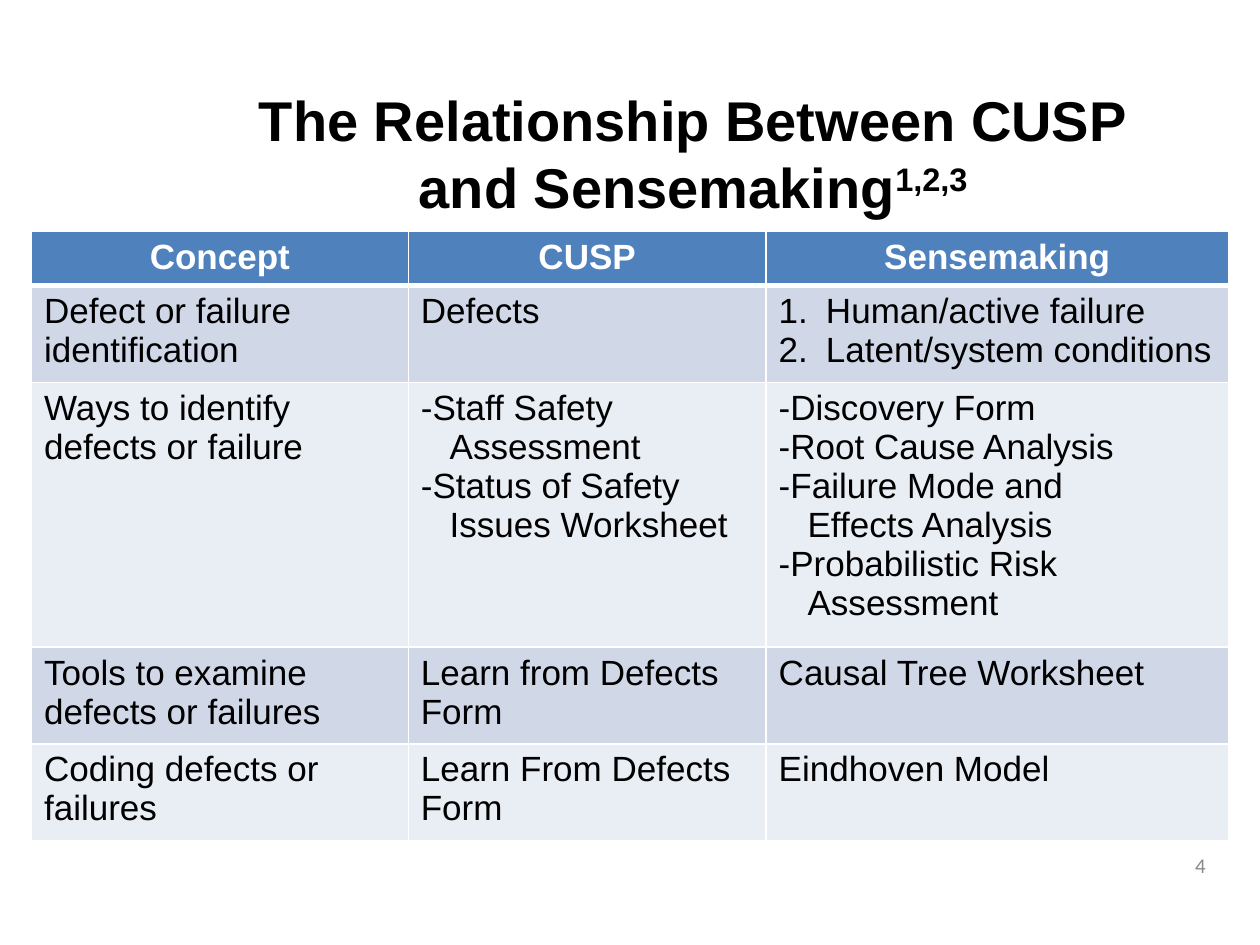
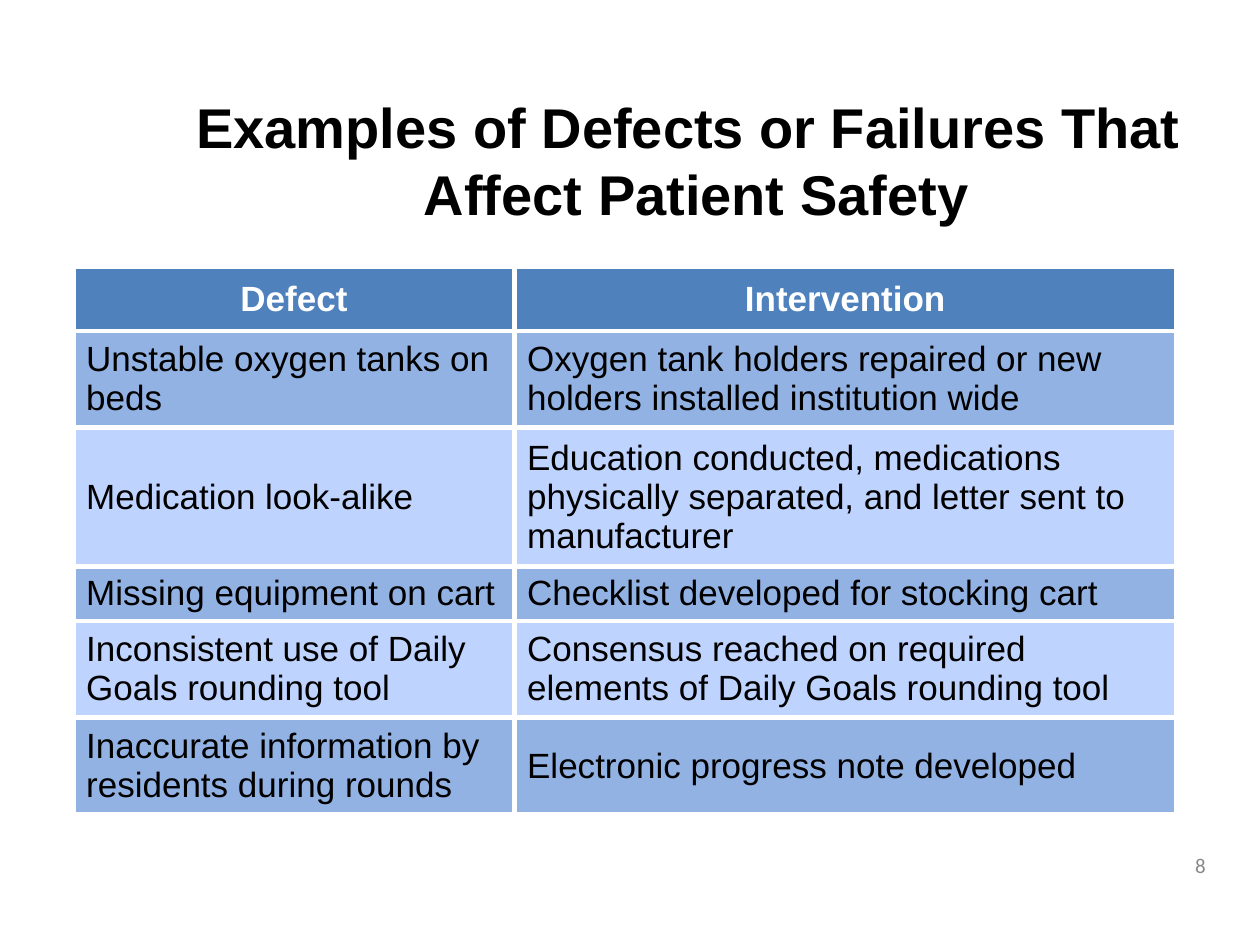
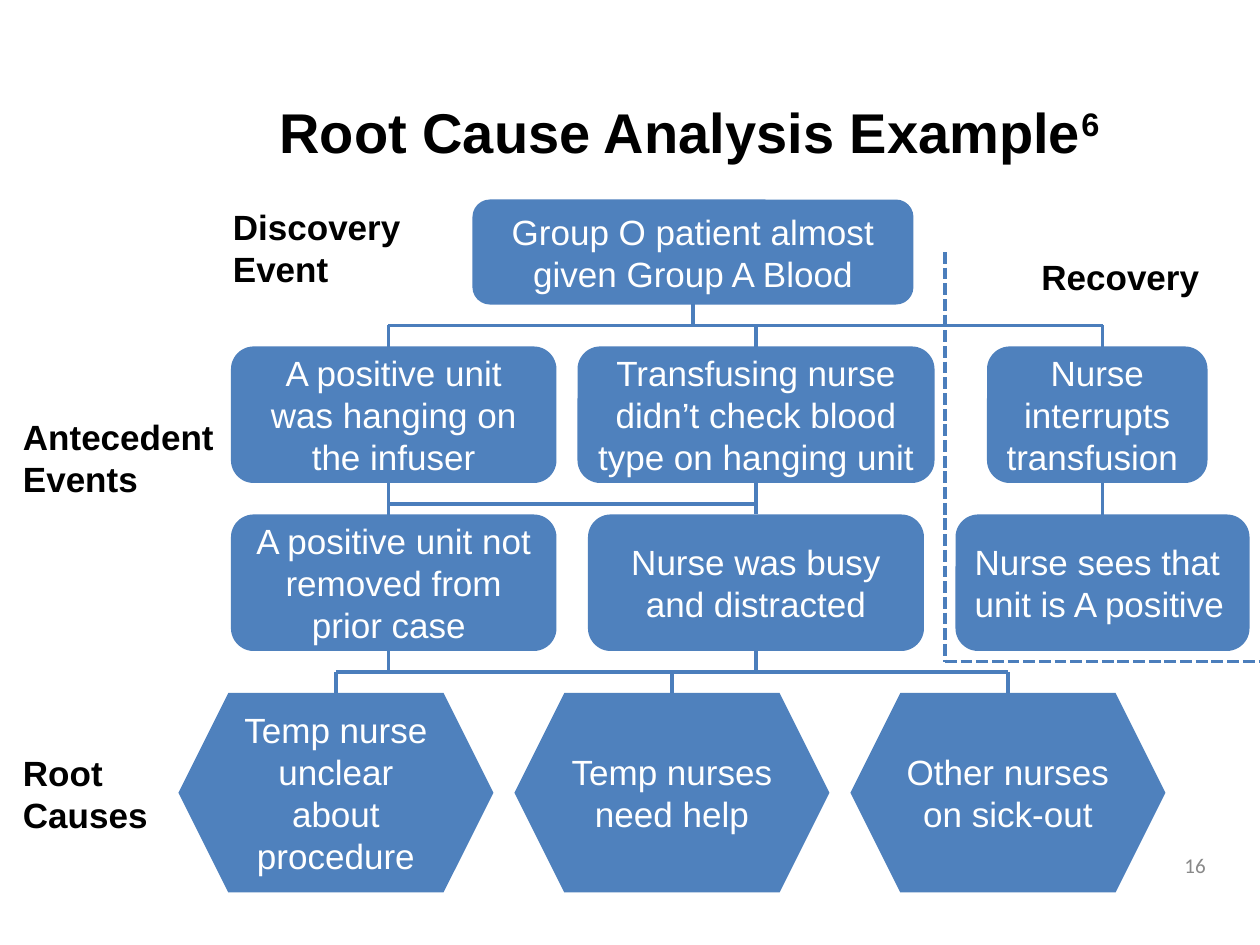
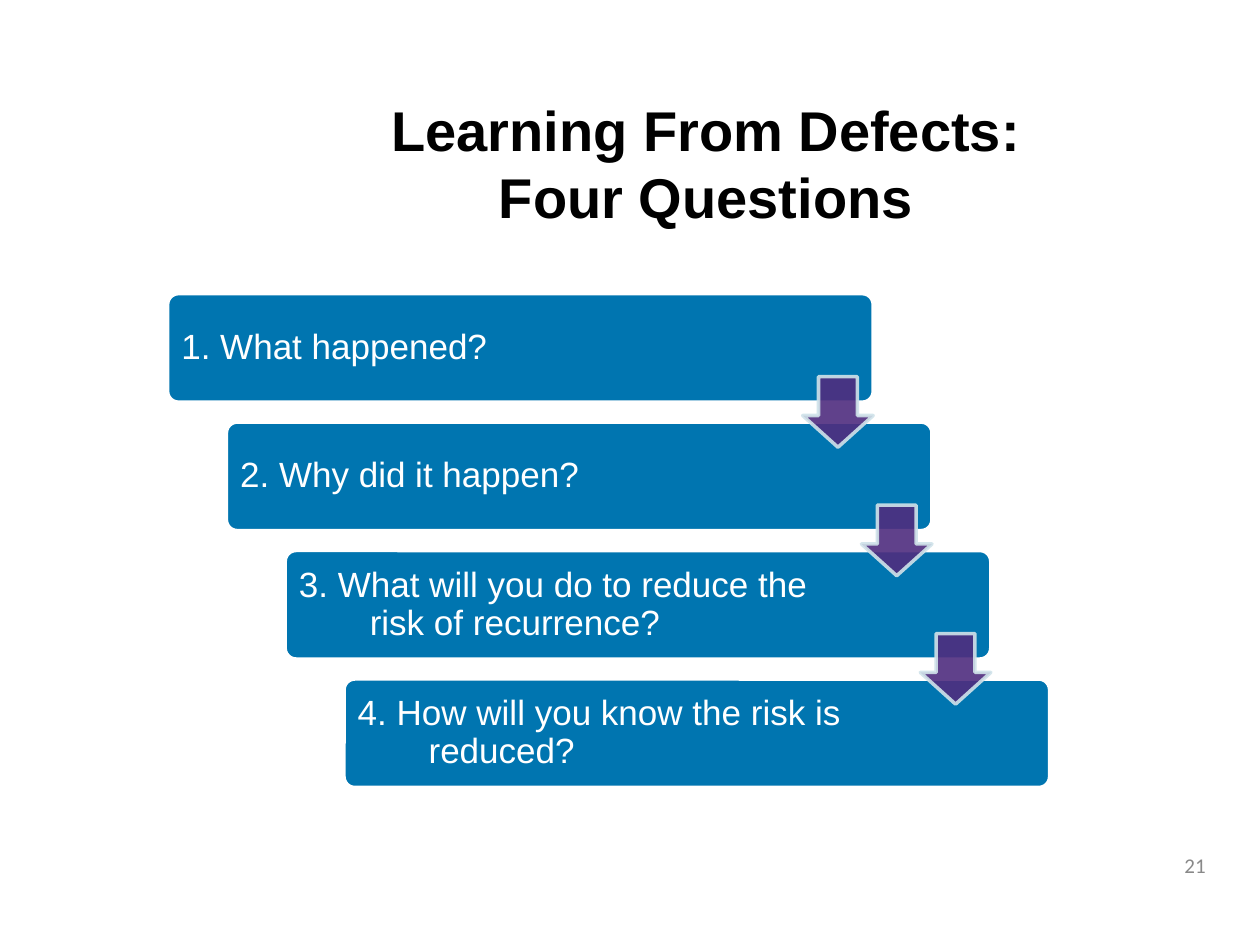
from dataclasses import dataclass
from typing import Any, NamedTuple

from lxml.etree import SubElement
from pptx import Presentation
from pptx.dml.color import RGBColor
from pptx.enum.dml import MSO_LINE as Dash
from pptx.enum.shapes import MSO_CONNECTOR as Link, MSO_SHAPE as Form
from pptx.enum.text import MSO_ANCHOR as Anchor, PP_ALIGN as Align
from pptx.oxml.ns import qn
from pptx.util import Pt

INK = {
    "black": "000000", "white": "FFFFFF", "gray": "898989",
    "blue": "4F81BD", "line": "4B7EBC", "step": "0075B0",
    "band": "D0D8E8", "pale": "E9EDF4", "mid": "92B2E4", "sky": "BFD3FF",
    "plum": "4F2D7F", "ice": "D0E3EA",
}


class Box(NamedTuple):
    x: float
    y: float
    w: float
    h: float


class Node(NamedTuple):
    text: str
    box: Box
    align: Align = Align.CENTER


class Wire(NamedTuple):
    x1: float
    y1: float
    x2: float
    y2: float


@dataclass(frozen=True)
class Look:
    size: float = 20
    tint: str = "white"
    bold: bool = False
    align: Align = Align.LEFT
    face: str = "Arial"
    pitch: float | None = None


@dataclass(frozen=True)
class Para:
    text: str
    sup: str = ""
    left: float = 0
    first: float = 0
    count: bool = False


@dataclass(frozen=True)
class Grid:
    box: Box
    cols: list[float]
    rows: list[float]
    cells: list[list[str | list[Para]]]
    bands: tuple[str, str]
    rule: float
    anchor: Anchor
    margin: float = 7.2


HEAD = Look(32, "black", True, Align.CENTER)
LABEL = Look(20, "black", True)
BODY = Look(20, "black")
TOP = Look(20, "white", True, Align.CENTER)
PAGE = Look(12, "gray", False, Align.RIGHT, "Calibri")


def tone(name: str) -> RGBColor:
    return RGBColor.from_string(INK[name])


def style(item: Any, values: dict[str, Any]) -> None:
    for name, value in values.items():
        setattr(item, name, value)


def place(box: Box) -> list[Pt]:
    return [Pt(side) for side in box]


def add_run(para: Any, text: str, look: Look, raised: bool = False) -> None:
    run = para.add_run()
    run.text = text
    style(run.font, {"name": look.face, "size": Pt(look.size), "bold": look.bold})
    run.font.color.rgb = tone(look.tint)
    if raised:
        run.font._element.set("baseline", "30000")


def write(frame: Any, text: str | list[Para], look: Look) -> None:
    paras = [Para(text)] if isinstance(text, str) else text
    for index, item in enumerate(paras):
        para = frame.add_paragraph() if index else frame.paragraphs[0]
        style(para, {"alignment": look.align, "line_spacing": look.pitch})
        props = para._p.get_or_add_pPr()
        if item.left:
            props.set("marL", str(Pt(item.left)))
            props.set("indent", str(Pt(item.first)))
        if item.count:
            SubElement(props, qn("a:buFont"), typeface="+mj-lt")
            SubElement(props, qn("a:buAutoNum"), type="arabicPeriod")
        for row, line in enumerate(item.text.split("\n")):
            if row:
                para.add_line_break()
            add_run(para, line, look)
        if item.sup:
            add_run(para, item.sup, look, True)


def add_text(slide: Any, box: Box, text: str | list[Para], look: Look,
             anchor: Anchor = Anchor.TOP) -> None:
    frame = slide.shapes.add_textbox(*place(box)).text_frame
    style(frame, {"word_wrap": True, "vertical_anchor": anchor})
    write(frame, text, look)


def add_form(slide: Any, form: Form, box: Box, fill: str, edge: str = "") -> Any:
    shape = slide.shapes.add_shape(form, *place(box))
    shape.shadow.inherit = False
    shape.fill.solid()
    shape.fill.fore_color.rgb = tone(fill)
    if edge:
        shape.line.color.rgb = tone(edge)
        shape.line.width = Pt(2)
    else:
        shape.line.fill.background()
    style(shape.text_frame, {"word_wrap": True, "vertical_anchor": Anchor.MIDDLE})
    return shape


def add_node(slide: Any, form: Form, node: Node) -> Any:
    shape = add_form(slide, form, node.box, "blue")
    write(shape.text_frame, node.text, Look(align=node.align))
    return shape


def add_wire(slide: Any, wire: Wire, dash: Dash | None = None) -> Any:
    line = slide.shapes.add_connector(Link.STRAIGHT, *[Pt(end) for end in wire])
    style(line.line, {"width": Pt(2.25), "dash_style": dash})
    line.line.color.rgb = tone("line")
    SubElement(line._element.spPr, qn("a:effectLst"))
    return line


def edge_cell(cell: Any, widths: dict[str, float]) -> None:
    props = cell._tc.get_or_add_tcPr()
    for index, (side, width) in enumerate(widths.items()):
        line = props.makeelement(qn(f"a:ln{side}"), {"w": str(Pt(width))})
        fill = SubElement(line, qn("a:solidFill"))
        SubElement(fill, qn("a:srgbClr"), val=INK["white"])
        props.insert(index, line)


def add_grid(slide: Any, grid: Grid) -> None:
    size = len(grid.rows), len(grid.cols)
    table = slide.shapes.add_table(*size, *place(grid.box)).table
    table.horz_banding = False
    for col, width in zip(table.columns, grid.cols):
        col.width = Pt(width)
    for row, height in zip(table.rows, grid.rows):
        row.height = Pt(height)
    for r, texts in enumerate(grid.cells):
        for c, text in enumerate(texts):
            cell = table.cell(r, c)
            style(cell, {
                "vertical_anchor": grid.anchor,
                "margin_left": Pt(grid.margin), "margin_right": Pt(grid.margin),
                "margin_top": Pt(3.6), "margin_bottom": Pt(3.6),
            })
            cell.fill.solid()
            cell.fill.fore_color.rgb = tone(grid.bands[(r - 1) % 2] if r else "blue")
            edge_cell(cell, {
                "L": grid.rule, "R": grid.rule,
                "T": 3 if r == 1 else grid.rule,
                "B": 3 if r == 0 else grid.rule,
            })
            write(cell.text_frame, text, BODY if r else TOP)


def start(deck: Any, box: Box, title: Para, page: int) -> Any:
    slide = deck.slides.add_slide(deck.slide_layouts[6])
    add_text(slide, box, [title], HEAD, Anchor.MIDDLE)
    add_text(slide, Box(528, 480, 168, 28.8), str(page), PAGE, Anchor.MIDDLE)
    return slide


def inset(text: str) -> Para:
    return Para(text, left=16.5)


def count(text: str) -> Para:
    return Para(text, left=27, first=-27, count=True)


def concepts(deck: Any) -> None:
    title = Para("The Relationship Between CUSP and Sensemaking", "1,2,3")
    slide = start(deck, Box(114, 42, 564, 90), title, 4)
    cells = [
        ["Concept", "CUSP", "Sensemaking"],
        ["Defect or failure identification", "Defects",
         [count("Human/active failure"), count("Latent/system conditions")]],
        ["Ways to identify defects or failure",
         [Para("-Staff Safety"), inset("Assessment"),
          Para("-Status of Safety"), inset("Issues Worksheet")],
         [Para("-Discovery Form"), Para("-Root Cause Analysis"),
          Para("-Failure Mode and"), inset("Effects Analysis"),
          Para("-Probabilistic Risk"), inset("Assessment")]],
        ["Tools to examine defects or failures", "Learn from Defects Form",
         "Causal Tree Worksheet"],
        ["Coding defects or failures", "Learn From Defects Form",
         "Eindhoven Model"],
    ]
    add_grid(slide, Grid(
        Box(18, 132, 684, 325), [215.3, 204.5, 264.2], [29, 52, 141, 52, 51],
        cells, ("band", "pale"), 1, Anchor.TOP))


def defects(deck: Any) -> None:
    title = Para("Examples of Defects or Failures That \nAffect Patient Safety")
    slide = start(deck, Box(74, 50.4, 648, 81.4), title, 8)
    cells = [
        ["Defect", "Intervention"],
        ["Unstable oxygen tanks on beds",
         "Oxygen tank holders repaired or new holders installed institution wide"],
        ["Medication look-alike",
         "Education conducted, medications physically separated, "
         "and letter sent to manufacturer"],
        ["Missing equipment on cart", "Checklist developed for stocking cart"],
        ["Inconsistent use of Daily Goals rounding tool",
         "Consensus reached on required elements of Daily Goals rounding tool"],
        ["Inaccurate information by residents during rounds",
         "Electronic progress note developed"],
    ]
    add_grid(slide, Grid(
        Box(42, 152.6, 630, 291), [252, 378], [36.5, 51, 73.5, 29, 51, 50],
        cells, ("mid", "sky"), 3, Anchor.MIDDLE))


def causes(deck: Any) -> None:
    title = Para("Root Cause Analysis Example", "6")
    slide = start(deck, Box(70, 30, 648, 90), title, 16)
    left, mid, right = 222, 432, 630
    hexes = ["Temp nurse unclear about procedure", "Temp nurses need help",
             "Other nurses on sick-out"]
    wires = [
        Wire(left, 186, right, 186), Wire(left, 288, mid, 288),
        Wire(192, 384, 576, 384),
        Wire(left, 186, left, 228), Wire(left, 252, left, 318),
        Wire(left, 360, left, 384),
        Wire(mid, 186, mid, 210), Wire(mid, 258, mid, 288),
        Wire(mid, 288, mid, 294), Wire(mid, 360, mid, 384),
        Wire(right, 186, right, 210), Wire(right, 264, right, 300),
    ]
    wires += [Wire(192 * i, 384, 192 * i, 408) for i in (1, 2, 3)]
    for wire in wires:
        add_wire(slide, wire)
    for i, text in enumerate(hexes):
        add_node(slide, Form.HEXAGON, Node(text, Box(102 + 192 * i, 396, 180, 114)))

    root = add_node(slide, Form.ROUNDED_RECTANGLE, Node(
        "Group O patient almost given Group A Blood", Box(270, 114, 252, 60)))
    upper, lower, tall = 198, 294, 78
    nodes = [
        Node("A positive unit was hanging on the infuser", Box(132, upper, 186, tall)),
        Node("Transfusing nurse didn’t check blood type on hanging unit ",
             Box(330, upper, 204, tall)),
        Node("A positive unit not removed from prior case ",
             Box(132, lower, 186, tall)),
        Node("Nurse was busy and distracted", Box(336, lower, 192, tall)),
        Node("Nurse interrupts transfusion ", Box(564, upper, 126, tall)),
        Node("Nurse sees that unit is A positive", Box(546, lower, 168, tall),
             Align.LEFT),
    ]
    for node in nodes:
        add_node(slide, Form.ROUNDED_RECTANGLE, node)
    stem = add_wire(slide, Wire(396, 174, 396, 186))
    stem.begin_connect(root, 2)

    labels = [
        Node("Recovery", Box(588, 142.5, 111.6, 31.5)),
        Node("Antecedent Events", Box(6, 234, 126, 55.5)),
        Node("Root Causes", Box(6, 426, 90, 55.5)),
        Node("Discovery Event", Box(126, 114, 120, 55.5)),
    ]
    for label in labels:
        add_text(slide, label.box, label.text, LABEL)
    for wire in (Wire(540, 144, 540, 378), Wire(540, 378, 720, 378)):
        add_wire(slide, wire, Dash.SQUARE_DOT)


def steps(deck: Any) -> None:
    title = Para("Learning From Defects: \nFour Questions ")
    slide = start(deck, Box(84, 48, 648, 90), title, 21)
    asks = [
        Para("1. What happened?"),
        Para("2. Why did it happen?"),
        Para("3. What will you do to reduce the risk of recurrence?",
             left=40.5, first=-40.5),
        Para("4. How will you know the risk is reduced?",
             left=40.5, first=-40.5),
    ]
    spots = [(95.8 + 33.6 * i, 167.8 + 73.4 * i) for i in range(len(asks))]
    for ask, (x, y) in zip(asks, spots):
        bar = add_form(slide, Form.ROUNDED_RECTANGLE, Box(x, y, 403.2, 62),
                       "step", "white")
        bar.adjustments[0] = 0.1
        style(bar.text_frame, {"margin_left": Pt(6), "margin_right": Pt(79)})
        write(bar.text_frame, [ask], Look(pitch=0.9))
    for x, y in spots[:-1]:
        arrow = add_form(slide, Form.DOWN_ARROW,
                         Box(x + 362.9, y + 47.5, 40.3, 40.3), "plum", "ice")
        arrow.adjustments[0], arrow.adjustments[1] = 0.55, 0.45
        for paint in arrow._element.spPr.iter(qn("a:srgbClr")):
            SubElement(paint, qn("a:alpha"), val="90000")


def main() -> None:
    deck = Presentation()
    style(deck, {"slide_width": Pt(720), "slide_height": Pt(540)})
    for build in (concepts, defects, causes, steps):
        build(deck)
    deck.save("out.pptx")


if __name__ == "__main__":
    main()
